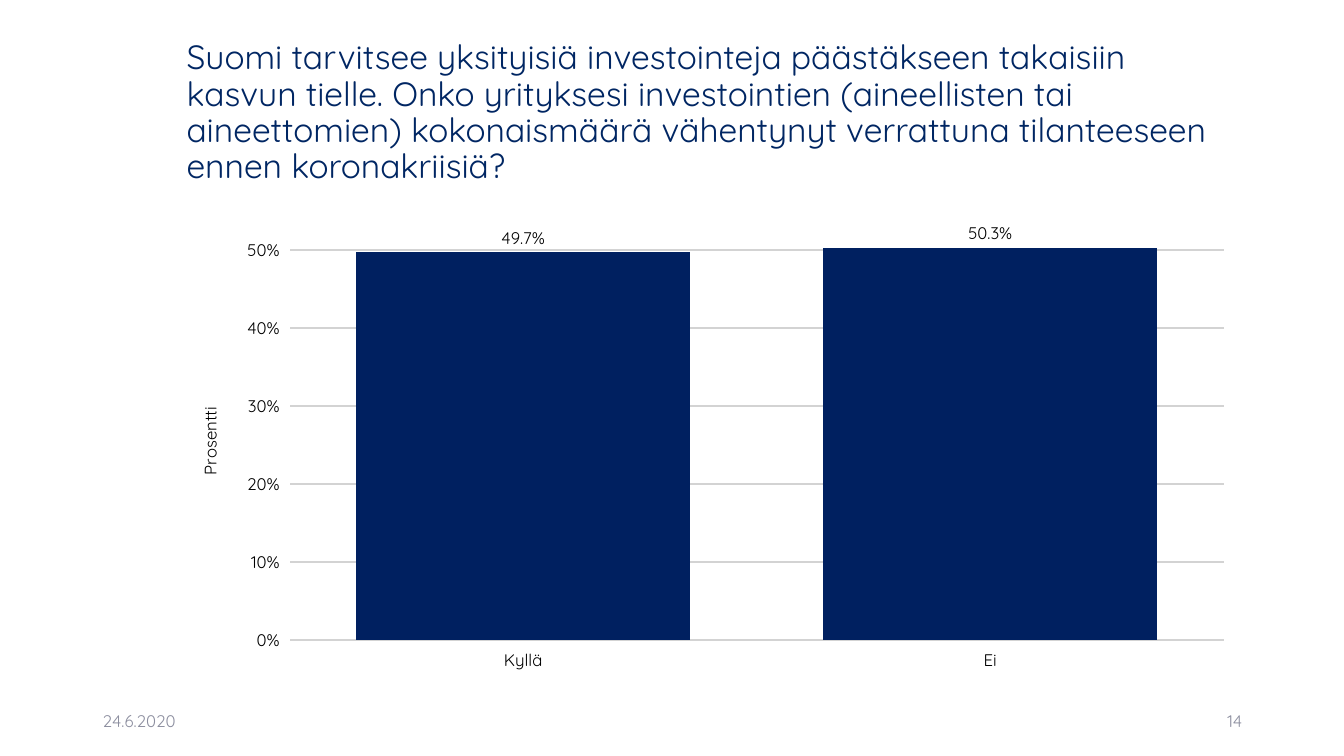
"""Build a survey slide with a two-column chart of investment answers."""
from lxml import etree
from pptx import Presentation
from pptx.chart.data import CategoryChartData
from pptx.dml.color import RGBColor
from pptx.enum.chart import XL_CHART_TYPE, XL_LABEL_POSITION, XL_TICK_MARK
from pptx.enum.text import MSO_ANCHOR, PP_ALIGN
from pptx.oxml.ns import qn
from pptx.util import Inches, Pt

COLUMNS = XL_CHART_TYPE.COLUMN_CLUSTERED
OUTSIDE_END = XL_LABEL_POSITION.OUTSIDE_END
TICK_OUT = XL_TICK_MARK.OUTSIDE
MIDDLE = MSO_ANCHOR.MIDDLE
LEFT, RIGHT = PP_ALIGN.LEFT, PP_ALIGN.RIGHT
FONT = "Quicksand"
COLORS = {
    "title": "002663",
    "footer": "8C8E9F",
    "bar": "002060",
    "grid": "D3D3D3",
    "text": "000000",
    "white": "FFFFFF",
}


def style_font(font, size, color):
    font.name = FONT
    font.size = Pt(size)
    font.bold = False
    font.color.rgb = RGBColor.from_string(COLORS[color])


def write_text(shape, text, size, color, align):
    tf = shape.text_frame
    tf.word_wrap = True
    tf.vertical_anchor = MIDDLE
    p = tf.paragraphs[0]
    p.alignment = align
    r = p.add_run()
    r.text = text
    style_font(r.font, size, color)
    return p


prs = Presentation()
prs.slide_width = Inches(13.33)
prs.slide_height = Inches(7.5)
s = prs.slides.add_slide(prs.slide_layouts[5])

title = s.shapes.title
title.left, title.top = Inches(1.75), Inches(0.4)
title.width, title.height = Inches(10.59), Inches(1.45)
p = write_text(
    title,
    "Suomi tarvitsee yksityisiä investointeja päästäkseen takaisiin kasvun tielle. "
    "Onko yrityksesi investointien (aineellisten tai aineettomien) kokonaismäärä "
    "vähentynyt verrattuna tilanteeseen ennen koronakriisiä?",
    24, "title", LEFT,
)
p.line_spacing = 0.9

for text, left, align in [("24.6.2020", 0.92, LEFT), ("14", 9.42, RIGHT)]:
    sp = s.shapes.add_textbox(Inches(left), Inches(6.95), Inches(3), Inches(0.4))
    write_text(sp, text, 12, "footer", align)

data = CategoryChartData(number_format="0.0%")
data.categories = ["Kyllä", "Ei"]
data.add_series("Series 1", [0.497, 0.503])
chart = s.shapes.add_chart(
    COLUMNS, Inches(1.75), Inches(2), Inches(10.59), Inches(4.76), data
).chart
chart.has_legend = False
chart.has_title = False
style_font(chart.font, 12, "text")

for axis in (chart.category_axis, chart.value_axis):
    axis.major_tick_mark = TICK_OUT
    axis.format.line.fill.background()
    style_font(axis.tick_labels.font, 12, "text")

axis = chart.value_axis
axis.minimum_scale, axis.maximum_scale, axis.major_unit = 0, 0.55, 0.1
axis.tick_labels.number_format = "0%"
axis.tick_labels.number_format_is_linked = False
axis.has_major_gridlines = True
grid = axis.major_gridlines.format.line
grid.width = Pt(1)
grid.color.rgb = RGBColor.from_string(COLORS["grid"])
r = axis.axis_title.text_frame.paragraphs[0].add_run()
r.text = "Prosentti"
style_font(r.font, 12, "text")

plot = chart.plots[0]
plot.gap_width = 40
plot.vary_by_categories = False
fill = plot.series[0].format.fill
fill.solid()
fill.fore_color.rgb = RGBColor.from_string(COLORS["bar"])
plot.has_data_labels = True
labels = plot.data_labels
labels.show_value = True
labels.position = OUTSIDE_END
labels.number_format = "0.0%"
labels.number_format_is_linked = False
style_font(labels.font, 12, "text")

area = chart.element.find(".//" + qn("c:plotArea"))
for old in area.findall(qn("c:layout")):
    area.remove(old)
layout = etree.Element(qn("c:layout"))
area.insert(0, layout)
manual = etree.SubElement(layout, qn("c:manualLayout"))
for tag, val in [
    ("layoutTarget", "inner"), ("xMode", "edge"), ("yMode", "edge"),
    ("x", "0.106"), ("y", "0.02"), ("w", "0.875"), ("h", "0.894"),
]:
    etree.SubElement(manual, qn("c:" + tag)).set("val", val)
area_props = etree.SubElement(area, qn("c:spPr"))
area_fill = etree.SubElement(area_props, qn("a:solidFill"))
etree.SubElement(area_fill, qn("a:srgbClr")).set("val", COLORS["white"])

prs.save("out.pptx")
